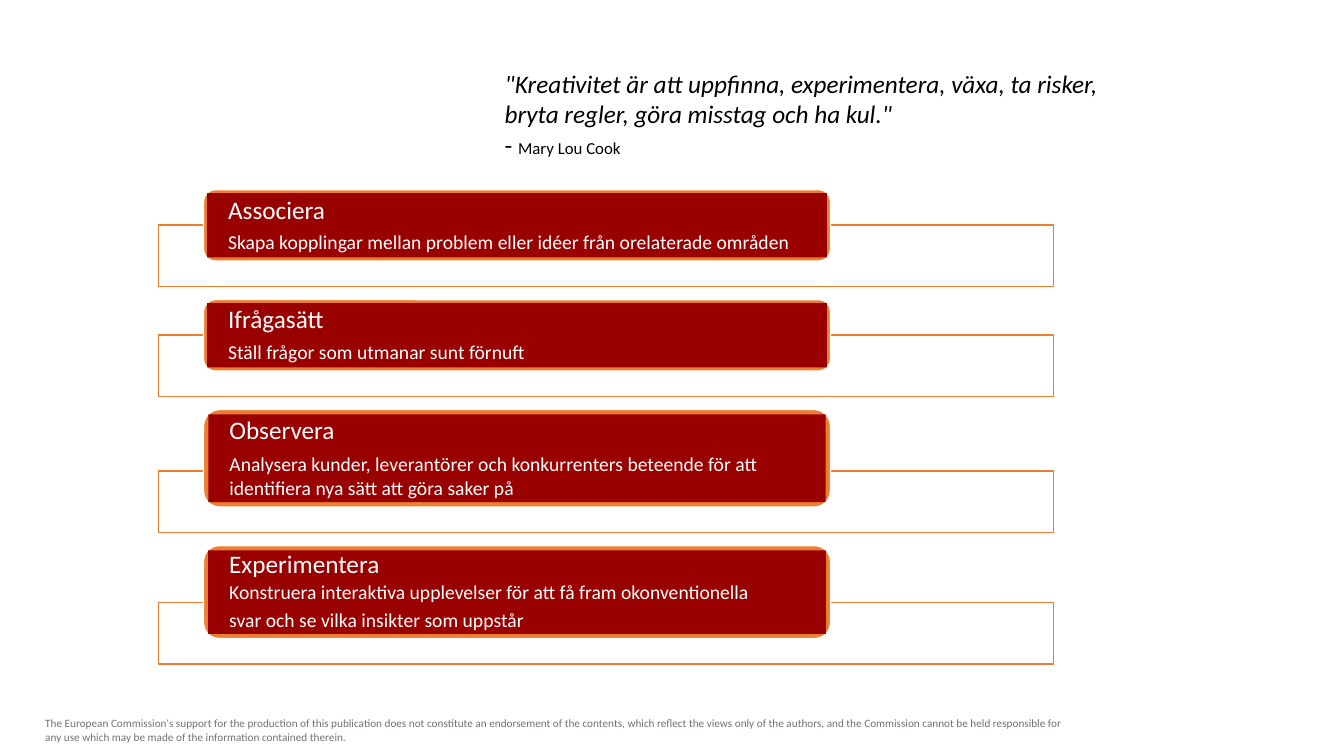
from lxml.etree import SubElement
from pptx import Presentation
from pptx.dml.color import RGBColor
from pptx.enum.shapes import MSO_SHAPE
from pptx.enum.text import MSO_ANCHOR, PP_ALIGN
from pptx.oxml.ns import qn
from pptx.util import Cm, Pt

COLORS = {"white": "FFFFFF", "black": "000000", "gray": "757070",
          "orange": "ED7D31", "red": "990000"}

TOP, GAP, OVERLAP = 4.78, 0.97, 0.91
FRAME_LEFT, FRAME_WIDTH, FRAME_HEIGHT = 3.99, 22.56, 1.55
CARD_LEFT, CARD_WIDTH = 5.13, 15.8
ROUND = 0.167
INSET = 0.05

CARDS = [
    (1.8, [
        ("Associera", 18, 0.9, 0),
        ("Skapa kopplingar mellan problem eller idéer från orelaterade områden", 14, 0.9, 5.6),
    ]),
    (1.8, [
        ("Ifrågasätt", 18, 0.9, 0),
        ("Ställ frågor som utmanar sunt förnuft", 14, 0.9, 5.6),
    ]),
    (2.46, [
        ("Observera", 18, 0.9, 0),
        ("Analysera kunder, leverantörer och konkurrenters beteende för att "
         "identifiera nya sätt att göra saker på", 14, 1.0, 5.6),
    ]),
    (2.34, [
        ("Experimentera", 18, 0.9, 0),
        ("Konstruera interaktiva upplevelser för att få fram okonventionella", 14, 1.0, 0),
        ("svar och se vilka insikter som uppstår", 14, 0.9, 5.6),
    ]),
]

QUOTE = ('"Kreativitet är att uppfinna, experimentera, växa, ta risker, '
         'bryta regler, göra misstag och ha kul."')
NOTICE = ("The European Commission's support for the production of this publication "
          "does not constitute an endorsement of the contents, which reflect the views "
          "only of the authors, and the Commission cannot be held responsible for any "
          "use which may be made of the information contained therein.")


def color(name):
    return RGBColor.from_string(COLORS[name])


def set_font(font, size, tint, italic=False):
    font.name = "Calibri"
    font.size = Pt(size)
    font.italic = italic
    font.color.rgb = color(tint)


def add_box(slide, kind, left, top, width, height, fill, line=None):
    box = slide.shapes.add_shape(kind, Cm(left), Cm(top), Cm(width), Cm(height))
    box.shadow.inherit = False
    box.fill.solid()
    box.fill.fore_color.rgb = color(fill)
    if line:
        box.line.color.rgb = color(line)
        box.line.width = Pt(1)
    else:
        box.line.fill.background()
    return box


def add_text(slide, left, top, width, height):
    box = slide.shapes.add_textbox(Cm(left), Cm(top), Cm(width), Cm(height))
    box.text_frame.word_wrap = True
    return box.text_frame


def add_frame(slide, top):
    frame = add_box(slide, MSO_SHAPE.RECTANGLE, FRAME_LEFT, top,
                    FRAME_WIDTH, FRAME_HEIGHT, "white", "orange")
    tint = next(frame.element.spPr.iter(qn("a:srgbClr")))
    SubElement(tint, qn("a:alpha"), val="89000")


def fill_panel(panel, lines):
    body = panel.text_frame
    body.word_wrap = True
    body.vertical_anchor = MSO_ANCHOR.MIDDLE
    body.margin_left = body.margin_right = Cm(0.53)
    body.margin_top = body.margin_bottom = 0
    for index, (text, size, spacing, before) in enumerate(lines):
        para = body.add_paragraph() if index else body.paragraphs[0]
        para.text = text
        para.alignment = PP_ALIGN.LEFT
        para.line_spacing = spacing
        para.space_before = Pt(before)
        set_font(para.font, size, "white")


def add_card(slide, top, height, lines):
    add_frame(slide, top + height - OVERLAP)
    card = add_box(slide, MSO_SHAPE.ROUNDED_RECTANGLE, CARD_LEFT, top,
                   CARD_WIDTH, height, "orange", "white")
    card.adjustments[0] = ROUND
    edge = height * INSET
    panel = add_box(slide, MSO_SHAPE.RECTANGLE, CARD_LEFT + edge, top + edge,
                    CARD_WIDTH - 2 * edge, height - 2 * edge, "red")
    fill_panel(panel, lines)


def add_quote(slide):
    body = add_text(slide, 12.47, 1.6, 16.28, 3.33)
    quote = body.paragraphs[0]
    quote.text = QUOTE
    set_font(quote.font, 18, "black", italic=True)
    author = body.add_paragraph()
    for text, size in (("- ", 18), ("Mary Lou Cook", 12)):
        run = author.add_run()
        run.text = text
        set_font(run.font, size, "black")


def add_notice(slide):
    para = add_text(slide, 0.89, 17.93, 26.57, 0.94).paragraphs[0]
    para.text = NOTICE
    set_font(para.font, 8, "gray")


def main():
    deck = Presentation()
    deck.slide_width, deck.slide_height = Cm(33.87), Cm(19.05)
    slide = deck.slides.add_slide(deck.slide_layouts[6])
    add_notice(slide)
    add_quote(slide)
    top = TOP
    for height, lines in CARDS:
        add_card(slide, top, height, lines)
        top += height + GAP
    deck.save("out.pptx")


if __name__ == "__main__":
    main()
